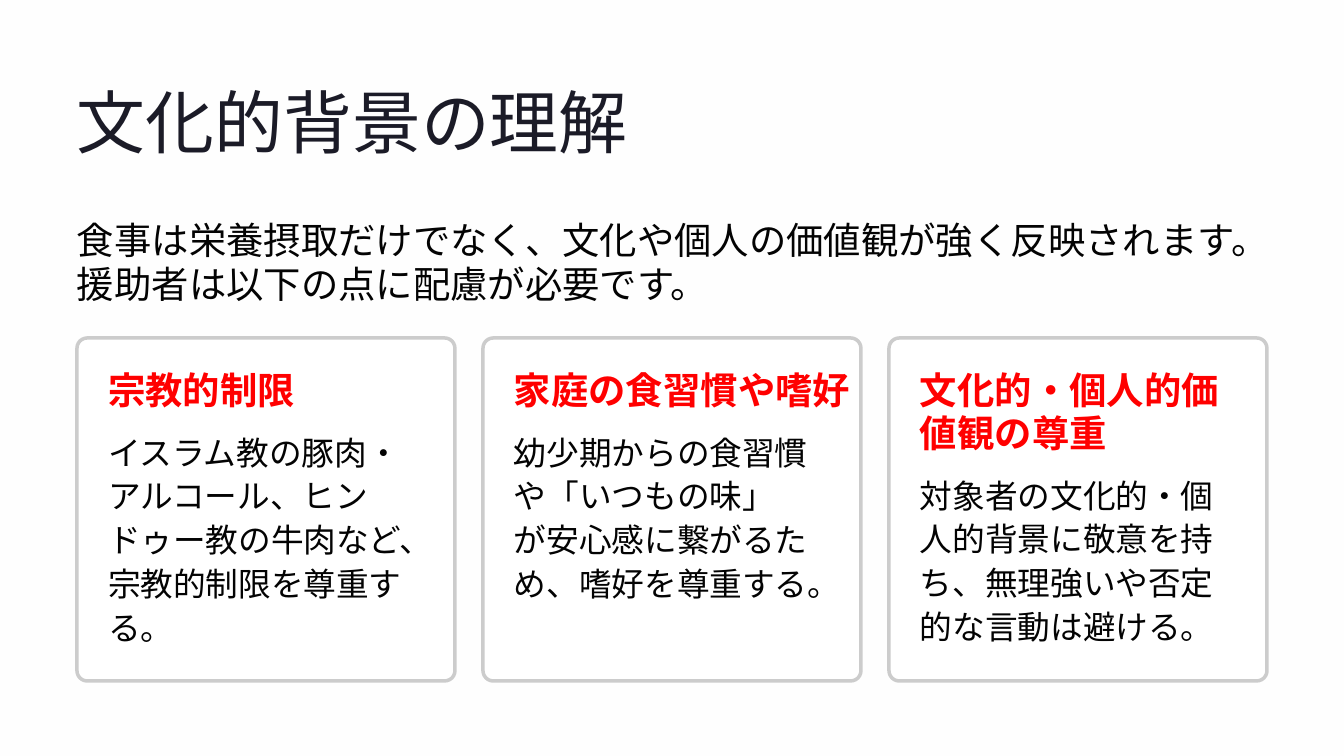
from lxml import etree
from pptx import Presentation
from pptx.dml.color import RGBColor
from pptx.enum.lang import MSO_LANGUAGE_ID as LANGUAGE
from pptx.enum.shapes import MSO_SHAPE as SHAPE
from pptx.enum.text import MSO_ANCHOR as ANCHOR, MSO_AUTO_SIZE as AUTO_SIZE, PP_ALIGN as ALIGN
from pptx.oxml.ns import qn
from pptx.util import Pt

COLORS = {
    "background": "FEFEFE",
    "card": "FFFFFF",
    "border": "CCCCCC",
    "title": "1B1B27",
    "heading": "FF0000",
    "body": "030303",
}
PX = 914400 / 84

LEFT = 77
CARD_TOP, CARD_WIDTH, CARD_HEIGHT, CARD_PITCH = 338, 378, 343, 406
CARD_PADDING = 31
TEXT_WIDTH = CARD_WIDTH - 2 * CARD_PADDING
HEADING_LINE, HEADING_GAP, BODY_HEIGHT = 43, 16, 177

# heading, number of heading lines, body paragraphs
CARDS = [
    ("宗教的制限", 1,
     ["イスラム教の豚肉・アルコール、ヒンドゥー教の牛肉など、宗教的制限を尊重する。"]),
    ("家庭の食習慣や嗜好", 1,
     ["幼少期からの食習慣や「いつもの味」", "が安心感に繋がるため、嗜好を尊重する。"]),
    ("文化的・個人的価値観の尊重", 2,
     ["対象者の文化的・個人的背景に敬意を持ち、無理強いや否定的な言動は避ける。"]),
]


def px(*lengths):
    return [round(length * PX) for length in lengths]


def write_text(paragraphs, box, *, size, color, font, spacing, bold=False, wrap=True, shape=None):
    """Fill the given shape, or a new text box, placed at box in px."""
    if shape is None:
        shape = slide.shapes.add_textbox(*px(*box))
    else:
        shape.left, shape.top, shape.width, shape.height = px(*box)
    frame = shape.text_frame
    frame.margin_left = frame.margin_top = frame.margin_right = frame.margin_bottom = 0
    frame.auto_size = AUTO_SIZE.NONE
    frame.vertical_anchor = ANCHOR.TOP
    frame.word_wrap = wrap
    frame.text = "\n".join(paragraphs)
    for paragraph in frame.paragraphs:
        paragraph.alignment = ALIGN.LEFT
        paragraph.line_spacing = Pt(spacing)
        run_font = paragraph.runs[0].font
        run_font.name = font
        run_font.size = Pt(size)
        run_font.bold = bold
        run_font.color.rgb = RGBColor.from_string(COLORS[color])
        run_font.language_id = LANGUAGE.JAPANESE
        properties = paragraph.runs[0]._r.get_or_add_rPr()
        etree.SubElement(properties, qn("a:ea"), typeface=font)


presentation = Presentation()
presentation.slide_width, presentation.slide_height = px(1344, 756)
slide = presentation.slides.add_slide(presentation.slide_layouts[5])
slide.background.fill.solid()
slide.background.fill.fore_color.rgb = RGBColor.from_string(COLORS["background"])

write_text(["文化的背景の理解"], (LEFT, 76, 692, 87), shape=slide.shapes.title,
           size=59, color="title", font="Inter", spacing=74, wrap=False)
write_text(["食事は栄養摂取だけでなく、文化や個人の価値観が強く反映されます。"
            "援助者は以下の点に配慮が必要です。"], (LEFT, 218, 1189, 88),
           size=32, color="body", font="Lato", spacing=37.5)

for index, (heading, heading_lines, body) in enumerate(CARDS):
    card_left = LEFT + index * CARD_PITCH
    card = slide.shapes.add_shape(
        SHAPE.ROUNDED_RECTANGLE, *px(card_left, CARD_TOP, CARD_WIDTH, CARD_HEIGHT))
    card.adjustments[0] = 0.03
    card.shadow.inherit = False
    card.fill.solid()
    card.fill.fore_color.rgb = RGBColor.from_string(COLORS["card"])
    card.line.color.rgb = RGBColor.from_string(COLORS["border"])
    card.line.width = Pt(3)

    text_left = card_left + CARD_PADDING
    heading_top = CARD_TOP + CARD_PADDING
    heading_height = heading_lines * HEADING_LINE
    write_text([heading], (text_left, heading_top, TEXT_WIDTH, heading_height),
               size=32, color="heading", font="Inter", spacing=37, bold=True,
               wrap=heading_lines > 1)
    body_top = heading_top + heading_height + HEADING_GAP
    write_text(body, (text_left, body_top, TEXT_WIDTH, BODY_HEIGHT),
               size=28, color="body", font="Lato", spacing=37.5)

presentation.save("out.pptx")
